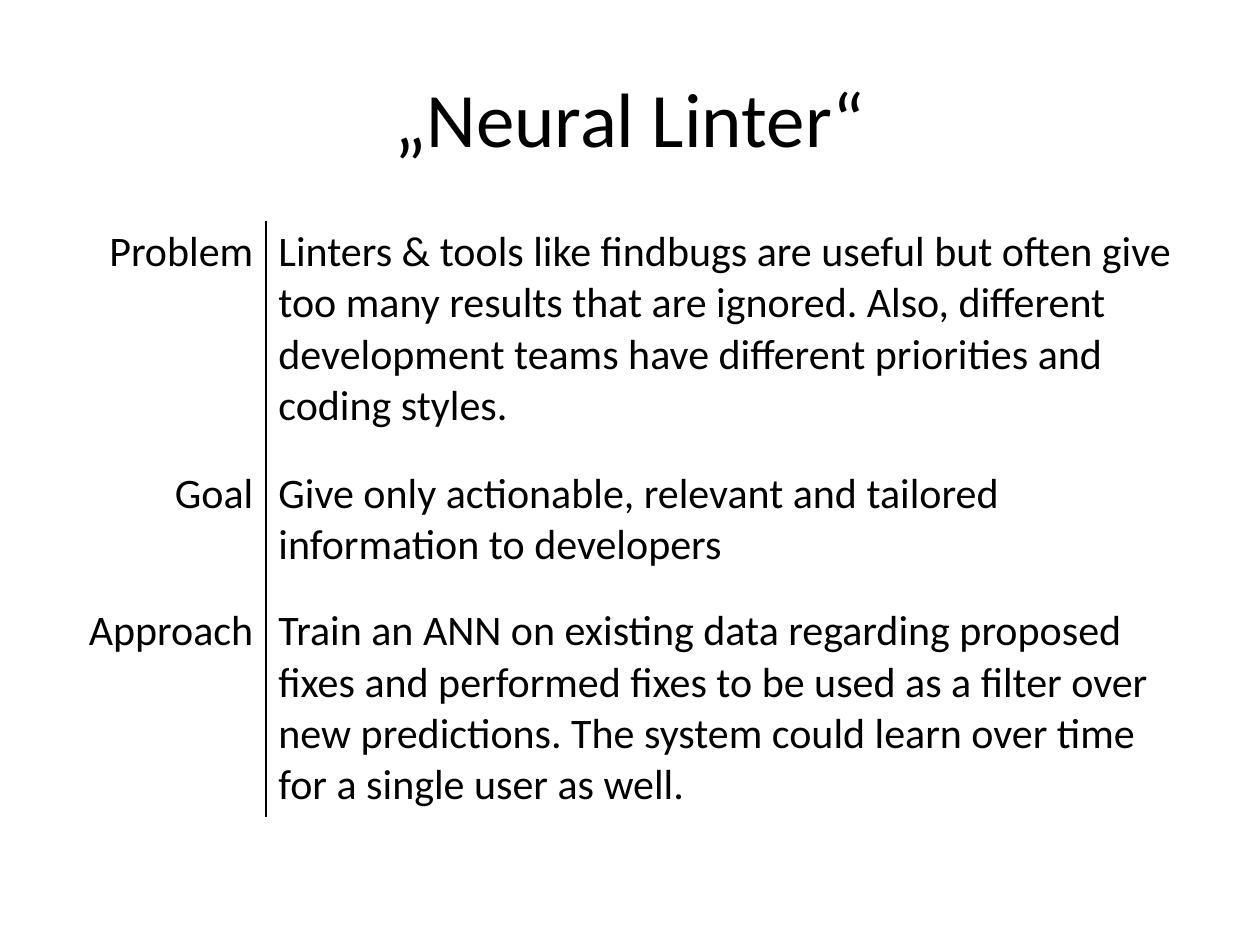
from lxml import etree
from pptx import Presentation
from pptx.dml.color import RGBColor
from pptx.enum import text
from pptx.oxml import parse_xml
from pptx.oxml import ns
from pptx.util import Inches, Pt

COLORS = {"ink": "000000"}
FONT = "Calibri"
NO_GRID_STYLE = "{2D5ABB26-0587-4C30-8999-92F81FD0307C}"
TOPICS = [
    ("Problem", "Linters & tools like findbugs are useful but often give too many "
     "results that are ignored. Also, different development teams have different "
     "priorities and coding styles."),
    ("Goal", "Give only actionable, relevant and tailored information to developers"),
    ("Approach", "Train an ANN on existing data regarding proposed fixes and performed "
     "fixes to be used as a filter over new predictions. The system could learn over "
     "time for a single user as well."),
]
COL_WIDTHS = (1.61, 7.39)
ROW_HEIGHTS = (1.92, 1.09, 1.71)


def write(tf, words, size, align):
    tf.text = words
    p = tf.paragraphs[0]
    p.alignment = align
    font = p.runs[0].font
    font.name, font.size = FONT, Pt(size)
    font.color.rgb = RGBColor.from_string(COLORS["ink"])


def add_border(cell, side):
    """Draw a 1 pt line on one side of a cell (side is L or R)."""
    line = parse_xml(
        f'<a:ln{side} {ns.nsdecls("a")} w="{Pt(1)}"><a:solidFill>'
        f'<a:srgbClr val="{COLORS["ink"]}"/></a:solidFill></a:ln{side}>')
    cell._tc.get_or_add_tcPr().insert(0, line)


def add_title(s, left, top, width, height):
    title = s.shapes.title
    title.left, title.top = Inches(left), Inches(top)
    title.width, title.height = Inches(width), Inches(height)
    title.text_frame.vertical_anchor = text.MSO_ANCHOR.MIDDLE
    write(title.text_frame, "„Neural Linter“", 44, text.PP_ALIGN.CENTER)


def add_topics(s, left, top, width, height):
    table = s.shapes.add_table(len(TOPICS), 2, Inches(left), Inches(top),
                               Inches(width), Inches(height)).table
    table.first_row = table.horz_banding = False
    table._tbl.tblPr.find(ns.qn("a:tableStyleId")).text = NO_GRID_STYLE
    for column, size in zip(table.columns, COL_WIDTHS):
        column.width = Inches(size)
    for row, size, topic in zip(table.rows, ROW_HEIGHTS, TOPICS):
        row.height = Inches(size)
        aligns = (text.PP_ALIGN.RIGHT, text.PP_ALIGN.LEFT)
        # The inner edges of both cells form the vertical divider
        for cell, words, align, side in zip(row.cells, topic, aligns, "RL"):
            cell.fill.background()
            write(cell.text_frame, words, 24, align)
            add_border(cell, side)


def main():
    prs = Presentation()
    prs.slide_width, prs.slide_height = Inches(10), Inches(7.5)
    s = prs.slides.add_slide(prs.slide_layouts[5])
    add_title(s, 0.5, 0.3, 9, 1.25)
    add_topics(s, 0.5, 1.75, sum(COL_WIDTHS), sum(ROW_HEIGHTS))
    prs.save("out.pptx")


if __name__ == "__main__":
    main()
